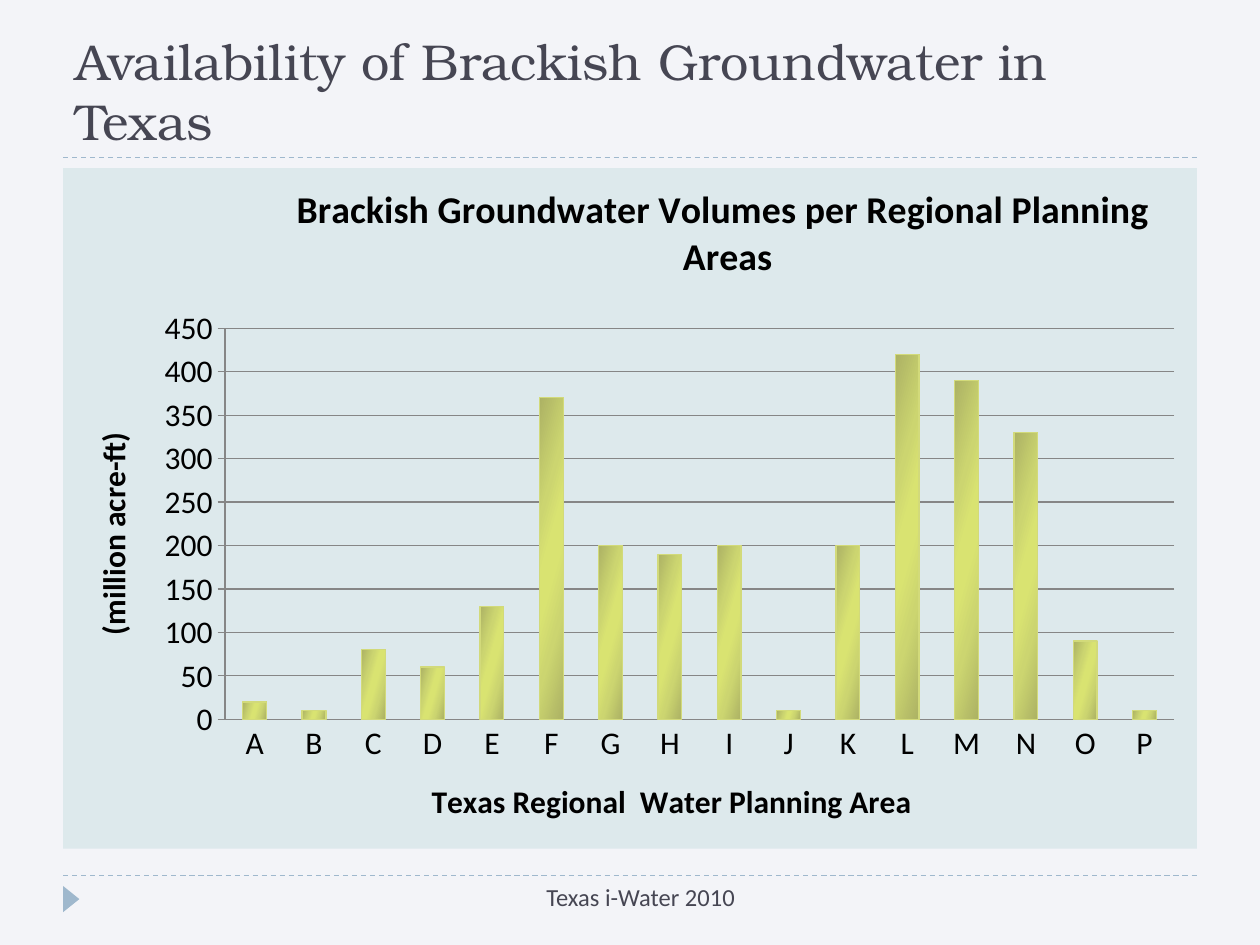
from collections import namedtuple
from dataclasses import dataclass

from lxml import etree
from pptx import Presentation
from pptx import util as u
from pptx.chart import data as chart_data
from pptx.dml import color
from pptx.enum import chart as charts, dml, shapes, text
from pptx.oxml import ns

Box = namedtuple("Box", "left top width height")


@dataclass(frozen=True)
class Theme:
    """Colours, fonts and type sizes of the slide."""
    background: str = "F3F4F8"
    ink: str = "464653"
    accent: str = "9FB8CD"
    panel: str = "DDE9EC"
    chart_ink: str = "000000"
    grid: str = "868686"
    bar_line: str = "D2DA7A"
    bar_stops: tuple = ((0, "ACB264"), (30, "CCD570"), (45, "D9E371"),
                        (55, "D9E371"), (73, "CCD570"), (100, "ACB264"))
    title_font: str = "TeX Gyre Bonum"
    body_font: str = "Calibri"
    title_size: float = 28.8
    chart_title_size: float = 21.6
    chart_size: float = 18
    footer_size: float = 14


THEME = Theme()
VOLUMES = dict(zip("ABCDEFGHIJKLMNOP", (
    20, 10, 80, 60, 130, 370, 200, 190, 200, 10, 200, 420, 390, 330, 90, 10)))


def rgb(value):
    """Turn a hex string into a colour."""
    return color.RGBColor.from_string(value)


def place(shape, box):
    """Move a shape to a box given in centimetres."""
    shape.left, shape.top, shape.width, shape.height = map(u.Cm, box)


def add_run(paragraph, wording, font, size, ink, bold=False):
    """Append one formatted run."""
    run = paragraph.add_run()
    run.text = wording
    run.font.name, run.font.size, run.font.bold = font, u.Pt(size), bold
    run.font.color.rgb = rgb(ink)


def add_rule(slide, left, top, width):
    """Draw a dashed horizontal rule."""
    rule = slide.shapes.add_connector(
        shapes.MSO_CONNECTOR.STRAIGHT,
        u.Cm(left), u.Cm(top), u.Cm(left + width), u.Cm(top))
    rule.line.color.rgb = rgb(THEME.accent)
    rule.line.width = u.Pt(0.75)
    rule.line.dash_style = dml.MSO_LINE.DASH
    etree.SubElement(rule._element.spPr, ns.qn("a:effectLst"))


def build_header(slide, box):
    """Fill the title placeholder and underline it."""
    title = slide.shapes.title
    place(title, box)
    frame = title.text_frame
    frame.word_wrap = True
    frame.auto_size = text.MSO_AUTO_SIZE.NONE
    frame.vertical_anchor = text.MSO_ANCHOR.BOTTOM
    paragraph = frame.paragraphs[0]
    paragraph.alignment = text.PP_ALIGN.LEFT
    add_run(paragraph, "Availability of Brackish Groundwater in Texas",
            THEME.title_font, THEME.title_size, THEME.ink)
    add_rule(slide, box.left, box.top + box.height, box.width)


def set_layout(parent, index, target=None, **fractions):
    """Give a chart part a manual layout in fractions of the chart."""
    for old in parent.findall(ns.qn("c:layout")):
        parent.remove(old)
    layout = etree.Element(ns.qn("c:layout"))
    manual = etree.SubElement(layout, ns.qn("c:manualLayout"))
    settings = {"layoutTarget": target} if target else {}
    settings.update(xMode="edge", yMode="edge", **fractions)
    for name, value in settings.items():
        etree.SubElement(manual, ns.qn(f"c:{name}")).set("val", str(value))
    parent.insert(index, layout)


def set_chart_title(title, wording, size, x, y):
    """Write and place a chart or axis title."""
    add_run(title.text_frame.paragraphs[0], wording,
            THEME.body_font, size, THEME.chart_ink, bold=True)
    set_layout(title._element, 1, x=x, y=y)


def fill_bars(series):
    """Give the bars their gradient and outline."""
    fill = series.format.fill
    fill.gradient()
    fill.gradient_angle = 344
    stops = series._element.find(".//" + ns.qn("a:gsLst"))
    for stop in list(stops):
        stops.remove(stop)
    for position, value in THEME.bar_stops:
        stop = etree.SubElement(stops, ns.qn("a:gs"), pos=str(position * 1000))
        etree.SubElement(stop, ns.qn("a:srgbClr"), val=value)
    series.format.line.color.rgb = rgb(THEME.bar_line)
    series.format.line.width = u.Pt(0.75)


def fill_panel(chart):
    """Colour the background of the whole chart."""
    properties = etree.Element(ns.qn("c:spPr"))
    fill = etree.SubElement(properties, ns.qn("a:solidFill"))
    etree.SubElement(fill, ns.qn("a:srgbClr"), val=THEME.panel)
    line = etree.SubElement(properties, ns.qn("a:ln"))
    etree.SubElement(line, ns.qn("a:noFill"))
    chart._chartSpace.find(ns.qn("c:chart")).addnext(properties)


def build_chart(slide, box):
    """Add the column chart of groundwater volumes."""
    volumes = chart_data.CategoryChartData(number_format="#,##0")
    volumes.categories = list(VOLUMES)
    volumes.add_series("Series 1", list(VOLUMES.values()))
    chart = slide.shapes.add_chart(
        charts.XL_CHART_TYPE.COLUMN_CLUSTERED, *map(u.Cm, box), volumes).chart
    chart.font.name, chart.font.size = THEME.body_font, u.Pt(THEME.chart_size)
    chart.font.color.rgb = rgb(THEME.chart_ink)
    chart.has_legend = False
    fill_panel(chart)

    plot = chart.plots[0]
    plot.vary_by_categories = False
    plot.gap_width = 150
    fill_bars(plot.series[0])
    plot_left, plot_top, plot_right, plot_bottom = 1 / 7, 4 / 17, 0.98, 0.81
    set_layout(chart._chartSpace.find(".//" + ns.qn("c:plotArea")), 0,
               "inner", x=plot_left, y=plot_top,
               w=plot_right - plot_left, h=plot_bottom - plot_top)

    category_axis, value_axis = chart.category_axis, chart.value_axis
    category_axis.major_tick_mark = charts.XL_TICK_MARK.NONE
    value_axis.major_tick_mark = charts.XL_TICK_MARK.CROSS
    value_axis.minimum_scale, value_axis.maximum_scale = 0, 450
    value_axis.major_unit = 50
    value_axis.has_major_gridlines = True
    value_axis.tick_labels.number_format = "#,##0"
    value_axis.tick_labels.number_format_is_linked = False
    for part in (category_axis, value_axis, value_axis.major_gridlines):
        part.format.line.color.rgb = rgb(THEME.grid)
        part.format.line.width = u.Pt(0.75)

    set_chart_title(chart.chart_title,
                    "Brackish Groundwater Volumes per Regional Planning  Areas",
                    THEME.chart_title_size, 0.2, 0.01)
    set_chart_title(category_axis.axis_title,
                    "Texas Regional  Water Planning Area",
                    THEME.chart_size, 0.32, 0.89)
    set_chart_title(value_axis.axis_title, "(million acre-ft)",
                    THEME.chart_size, 0.02, 0.38)


def build_footer(slide, box):
    """Add the footer rule, marker and centred text."""
    add_rule(slide, box.left, box.top, box.width)
    marker = slide.shapes.add_shape(
        shapes.MSO_SHAPE.ISOSCELES_TRIANGLE,
        *map(u.Cm, (box.left - 0.1, box.top + 0.31, 0.53, 0.33)))
    marker.rotation = 90
    marker.shadow.inherit = False
    marker.fill.solid()
    marker.fill.fore_color.rgb = rgb(THEME.accent)
    marker.line.fill.background()
    caption = slide.shapes.add_textbox(
        *map(u.Cm, (box.left + 6.78, box.top, 9.73, box.height)))
    caption.text_frame.word_wrap = True
    paragraph = caption.text_frame.paragraphs[0]
    paragraph.alignment = text.PP_ALIGN.CENTER
    add_run(paragraph, "Texas i-Water 2010",
            THEME.body_font, THEME.footer_size, THEME.ink)


def main():
    """Build and save the slide."""
    presentation = Presentation()
    presentation.slide_width, presentation.slide_height = u.Cm(25.4), u.Cm(19.05)
    slide = presentation.slides.add_slide(presentation.slide_layouts[5])
    slide.background.fill.solid()
    slide.background.fill.fore_color.rgb = rgb(THEME.background)
    left, width = 1.27, 22.86
    build_header(slide, Box(left, 0.43, width, 2.74))
    build_chart(slide, Box(left, 3.39, width, 13.72))
    build_footer(slide, Box(left, 17.65, width, 1.02))
    presentation.save("out.pptx")


if __name__ == "__main__":
    main()
